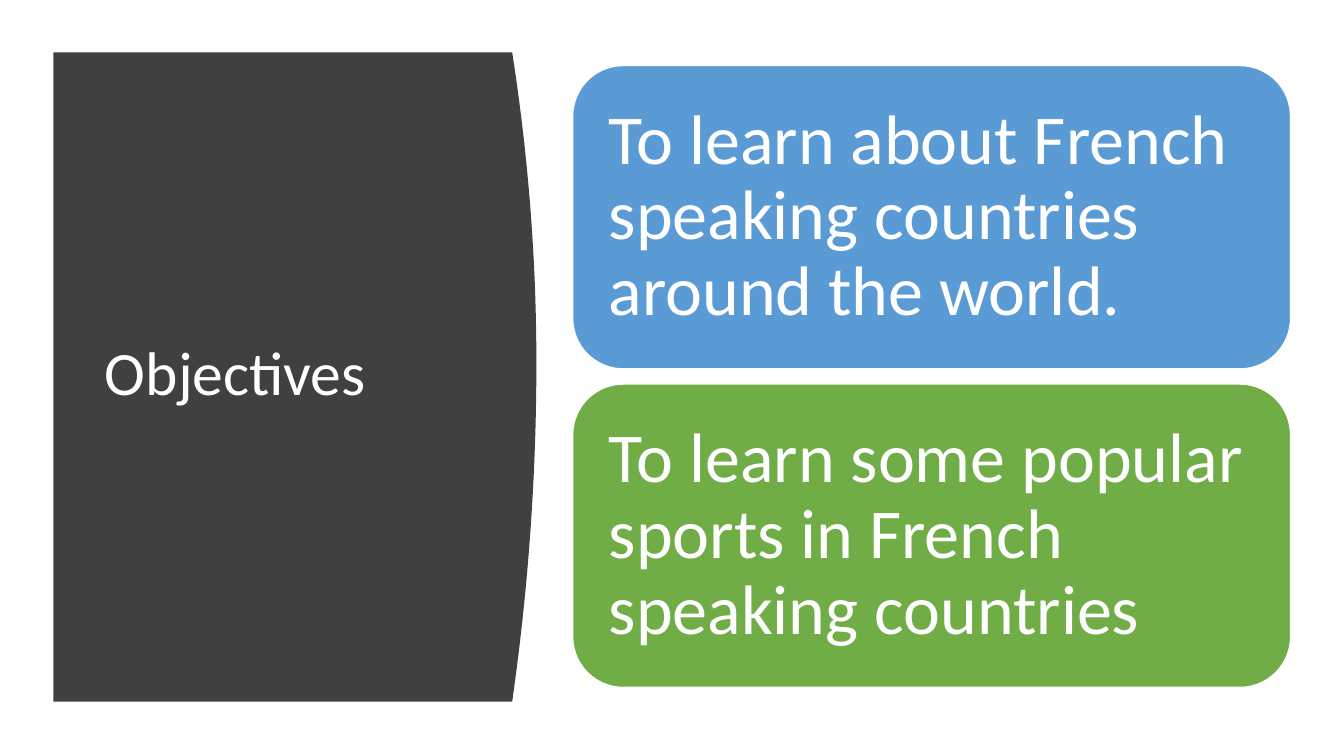
from pptx import Presentation
from pptx.dml.color import RGBColor
from pptx.enum.shapes import MSO_SHAPE as Shape
from pptx.enum.text import MSO_ANCHOR as Anchor, MSO_AUTO_SIZE as AutoSize, PP_ALIGN as Align
from pptx.util import Inches, Pt

WIDTH, HEIGHT = 13.33, 7.5
COLORS = {"panel": "404040", "white": "FFFFFF", "blue": "5B9BD5", "green": "70AD47"}
OBJECTIVES = [
    ("blue", "To learn about French speaking countries around the world."),
    ("green", "To learn some popular sports in French speaking countries"),
]
CARD_LEFT, CARD_TOP, CARD_WIDTH, CARD_HEIGHT = 5.68, 0.65, 7.12, 3.01
CARD_STEP = 3.16
TITLE_BOX = (0.94, 1.11, 3.74, 5.24)


def panel_outline(steps=40):
    """Return the points of a rectangle whose right side bulges as a parabola."""
    left, top, bottom = 0.53, 0.52, 6.96
    edge, bulge, peak = 5.08, 0.24, 3.6
    points = [(left, top)]
    for step in range(steps + 1):
        y = top + (bottom - top) * step / steps
        reach = peak - top if y < peak else bottom - peak
        points.append((edge + bulge * (1 - ((y - peak) / reach) ** 2), y))
    return points + [(left, bottom)]


class SlideBuilder:
    """Holds the style and the current slide; lengths are shares of the slide."""

    font = "Calibri"

    def __init__(self, presentation):
        self.width, self.height = presentation.slide_width, presentation.slide_height
        self.slide = presentation.slides.add_slide(presentation.slide_layouts[5])

    def box(self, left, top, width, height):
        return (round(left * self.width), round(top * self.height),
                round(width * self.width), round(height * self.height))

    def paint(self, shape, color, line=None):
        shape.shadow.inherit = False
        shape.fill.solid()
        shape.fill.fore_color.rgb = RGBColor.from_string(COLORS[color])
        if line:
            shape.line.color.rgb = RGBColor.from_string(COLORS[line])
            shape.line.width = Pt(1)
        else:
            shape.line.fill.background()

    def set_text(self, shape, text, size, margin):
        frame = shape.text_frame
        frame.word_wrap = True
        frame.auto_size = AutoSize.NONE
        frame.vertical_anchor = Anchor.MIDDLE
        frame.margin_left = frame.margin_right = Inches(margin)
        frame.margin_top = frame.margin_bottom = Inches(margin)
        paragraph = frame.paragraphs[0]
        paragraph.alignment = Align.LEFT
        paragraph.line_spacing = 0.9
        run = paragraph.add_run()
        run.text = text
        run.font.name = self.font
        run.font.size = Pt(size)
        run.font.color.rgb = RGBColor.from_string(COLORS["white"])

    def panel(self, points, color):
        corners = [(round(x * self.width), round(y * self.height)) for x, y in points]
        builder = self.slide.shapes.build_freeform(*corners[0])
        builder.add_line_segments(corners[1:], close=True)
        self.paint(builder.convert_to_shape(), color)

    def title(self, text, *box):
        shape = self.slide.shapes.title
        shape.left, shape.top, shape.width, shape.height = self.box(*box)
        self.set_text(shape, text, 44, 0.1)
        shape.element.getparent().append(shape.element)  # bring in front of the panel

    def card(self, text, color, *box):
        shape = self.slide.shapes.add_shape(Shape.ROUNDED_RECTANGLE, *self.box(*box))
        self.paint(shape, color, line="white")
        self.set_text(shape, text, 50, 0.21)


def shares(left, top, width, height):
    return left / WIDTH, top / HEIGHT, width / WIDTH, height / HEIGHT


def main():
    presentation = Presentation()
    presentation.slide_width, presentation.slide_height = Inches(WIDTH), Inches(HEIGHT)
    builder = SlideBuilder(presentation)
    builder.panel([(x / WIDTH, y / HEIGHT) for x, y in panel_outline()], "panel")
    builder.title("Objectives", *shares(*TITLE_BOX))
    for row, (color, text) in enumerate(OBJECTIVES):
        top = CARD_TOP + row * CARD_STEP
        builder.card(text, color, *shares(CARD_LEFT, top, CARD_WIDTH, CARD_HEIGHT))
    presentation.save("out.pptx")


if __name__ == "__main__":
    main()
